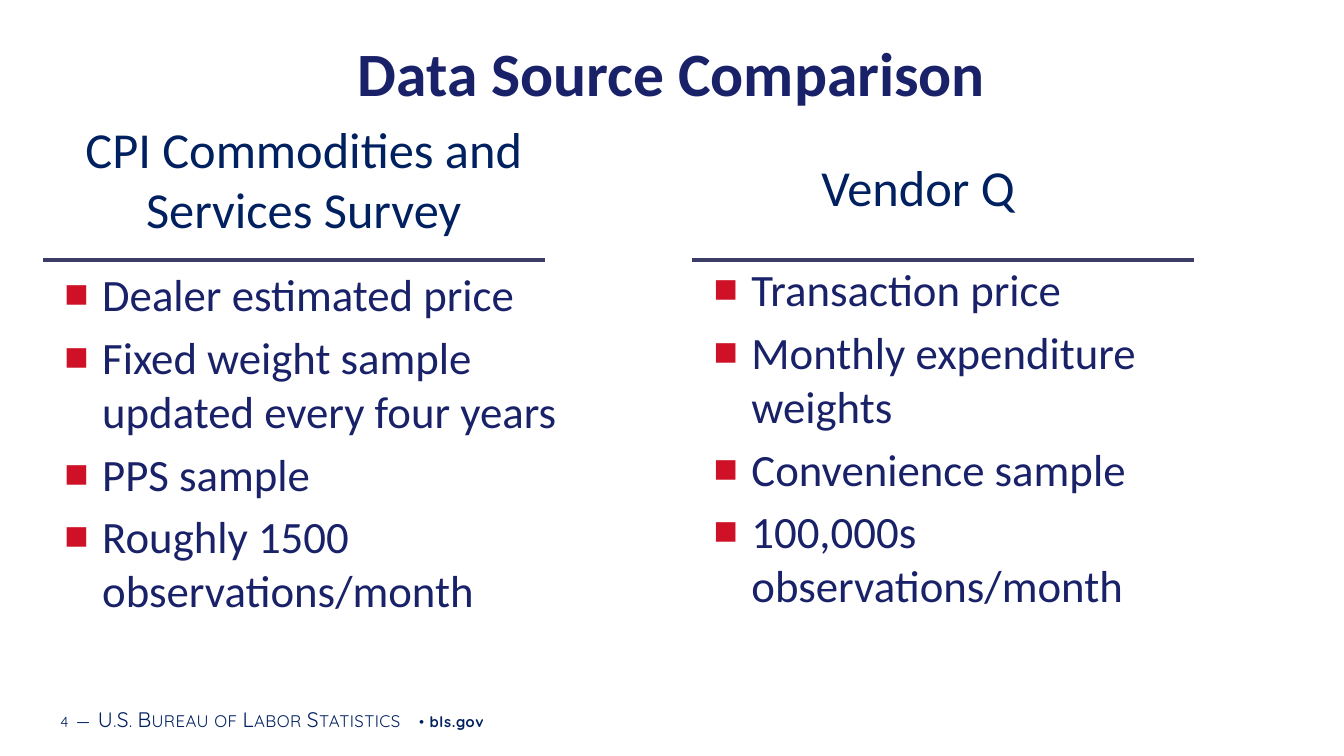
from dataclasses import dataclass

from lxml import etree
from pptx import Presentation
from pptx import util as u
from pptx.dml.color import RGBColor
from pptx.enum import shapes, text
from pptx.oxml import ns

NAVY = RGBColor(0x19, 0x21, 0x68)
DARK_BLUE = RGBColor(0x00, 0x20, 0x60)
RULE_BLUE = RGBColor(0x3C, 0x3D, 0x66)
RED = RGBColor(0xCE, 0x11, 0x26)
Pt = u.Pt
CENTER, LEFT = text.PP_ALIGN.CENTER, text.PP_ALIGN.LEFT
COLUMN_WIDTH = 418.3
RULE_Y, RULE_LENGTH = 185.8, 358.4


@dataclass(frozen=True)
class Column:
    heading: str
    heading_at: tuple[float, float, float]
    align: text.PP_ALIGN
    bullets: list[str]
    bullets_at: tuple[float, float]
    rule_x: float


@dataclass(frozen=True)
class FooterPart:
    words: str
    size: float
    spacing: int = 50
    small_caps: bool = False
    bold: bool = False


COLUMNS = [
    Column("CPI Commodities and Services Survey", (7.9, 80.6, 74.9), CENTER,
           ["Dealer estimated price", "Fixed weight sample updated every four years",
            "PPS sample", "Roughly 1500 observations/month"],
           (38.9, 187.2), 31),
    Column("Vendor Q", (579.6, 108, 47.5), LEFT,
           ["Transaction price", "Monthly expenditure weights",
            "Convenience sample", "100,000s observations/month"],
           (502.6, 183.6), 494.4),
]

FOOTER = [
    FooterPart("4", 10.5),
    FooterPart(" ", 16),
    FooterPart("—", 15, 30, True),
    FooterPart(" ", 16),
    FooterPart("U.S. Bureau of Labor Statistics", 15, 30, True),
    FooterPart(" • ", 10.5),
    FooterPart("bls.gov", 10.5, bold=True),
]


def add_run(p, words: str, *, size: float, color: RGBColor,
            font: str = "Calibri", bold: bool = False):
    r = p.add_run()
    r.text = words
    r.font.name, r.font.size, r.font.bold = font, Pt(size), bold
    r.font.color.rgb = color
    return r


def add_box(s, left: float, top: float, width: float, height: float):
    tf = s.shapes.add_textbox(Pt(left), Pt(top), Pt(width), Pt(height)).text_frame
    tf.word_wrap = True
    return tf


def add_bullet(p) -> None:
    pPr = p._p.get_or_add_pPr()
    pPr.set("marL", str(Pt(27)))
    pPr.set("indent", str(-Pt(27)))
    color = etree.SubElement(pPr, ns.qn("a:buClr"))
    etree.SubElement(color, ns.qn("a:srgbClr"), val=str(RED))
    etree.SubElement(pPr, ns.qn("a:buSzPct"), val="90000")
    etree.SubElement(pPr, ns.qn("a:buFont"), typeface="Arial")
    etree.SubElement(pPr, ns.qn("a:buChar"), char="■")


def add_title(s, words: str) -> None:
    sp = s.shapes.title
    sp.left, sp.top, sp.width, sp.height = Pt(38.9), Pt(21.6), Pt(882), Pt(86.4)
    sp.text_frame.vertical_anchor = text.MSO_ANCHOR.TOP
    p = sp.text_frame.paragraphs[0]
    p.alignment = CENTER
    add_run(p, words, size=44, color=NAVY, bold=True)


def add_column(s, column: Column) -> None:
    left, top, height = column.heading_at
    p = add_box(s, left, top, COLUMN_WIDTH, height).paragraphs[0]
    p.alignment = column.align
    add_run(p, column.heading, size=36, color=DARK_BLUE)

    tf = add_box(s, *column.bullets_at, COLUMN_WIDTH, 321.8)
    for i, words in enumerate(column.bullets):
        p = tf.add_paragraph() if i else tf.paragraphs[0]
        add_bullet(p)
        if i:
            p.space_before = Pt(6.4)
        add_run(p, words, size=32, color=NAVY)

    rule = s.shapes.add_connector(
        shapes.MSO_CONNECTOR.STRAIGHT, Pt(column.rule_x), Pt(RULE_Y),
        Pt(column.rule_x + RULE_LENGTH), Pt(RULE_Y))
    rule.line.color.rgb = RULE_BLUE
    rule.line.width = Pt(3)
    etree.SubElement(rule._element.spPr, ns.qn("a:effectLst"))


def add_footer(s) -> None:
    tf = add_box(s, 38.2, 499, 609.8, 28.8)
    tf.margin_left = tf.margin_right = Pt(5)
    tf.margin_top = tf.margin_bottom = Pt(2.9)
    tf.vertical_anchor = text.MSO_ANCHOR.MIDDLE
    for part in FOOTER:
        r = add_run(tf.paragraphs[0], part.words, size=part.size, color=DARK_BLUE,
                    font="Quicksand", bold=part.bold)
        rPr = r._r.get_or_add_rPr()
        rPr.set("spc", str(part.spacing))
        if part.small_caps:
            rPr.set("cap", "small")


def main() -> None:
    prs = Presentation()
    prs.slide_width, prs.slide_height = Pt(960), Pt(540)
    s = prs.slides.add_slide(prs.slide_layouts.get_by_name("Title Only"))
    add_footer(s)
    add_title(s, "Data Source Comparison")
    for column in COLUMNS:
        add_column(s, column)
    prs.save("out.pptx")


if __name__ == "__main__":
    main()
